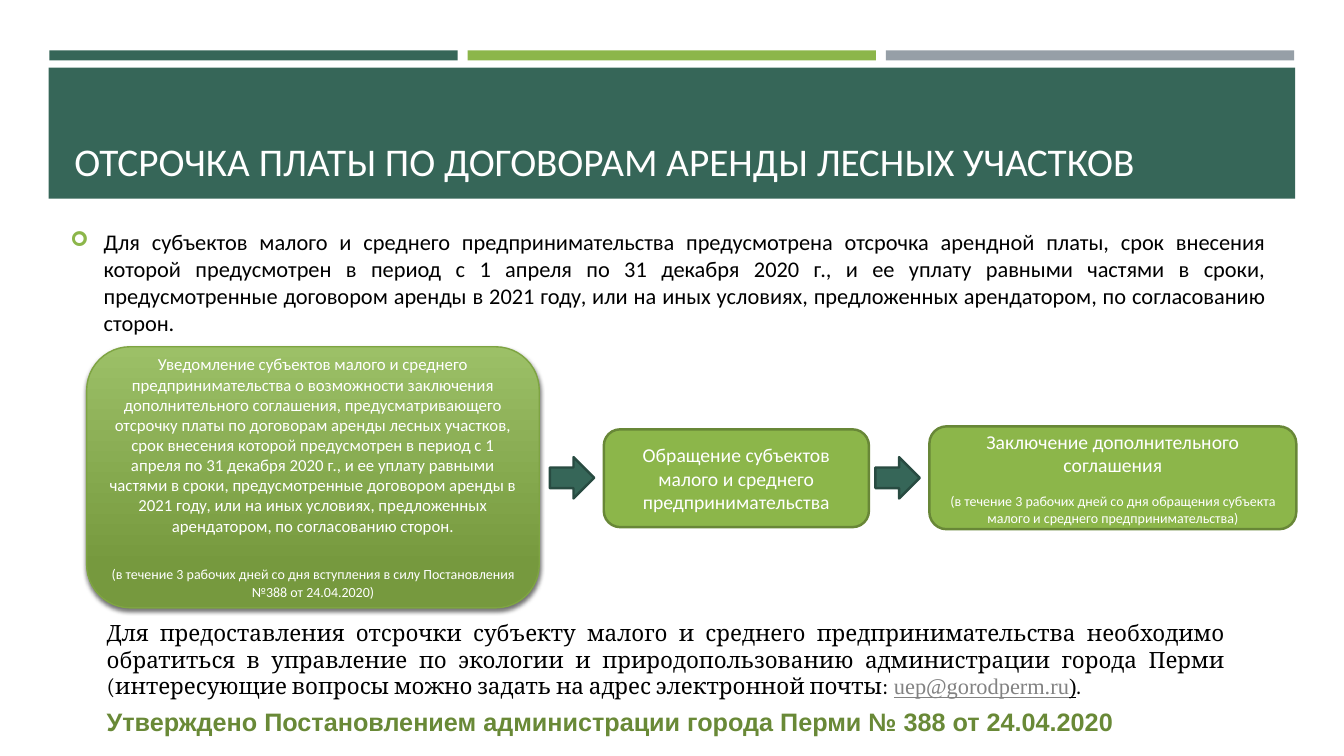
from lxml.etree import SubElement
from pptx import Presentation
from pptx.dml.color import RGBColor
from pptx.enum.shapes import MSO_SHAPE
from pptx.enum.text import MSO_ANCHOR, PP_ALIGN
from pptx.oxml.ns import qn
from pptx.util import Inches, Pt

PINE = RGBColor(0x36, 0x66, 0x58)
DEEP = RGBColor(0x28, 0x4B, 0x41)
LIME = RGBColor(0x8C, 0xB6, 0x4A)
MOSS = RGBColor(0x68, 0x87, 0x37)
LEAF = RGBColor(0x69, 0x89, 0x37)
PALE = RGBColor(0x9C, 0xC0, 0x67)
OLIVE = RGBColor(0x76, 0x99, 0x3E)
EDGE = RGBColor(0x7E, 0xA4, 0x42)
STEEL = RGBColor(0x96, 0x9F, 0xA7)
GREY = RGBColor(0x82, 0x82, 0x82)
WHITE = RGBColor(0xFF, 0xFF, 0xFF)
BLACK = RGBColor(0, 0, 0)

COLS, ROWS = 40, 30


class Board:
    font = "Calibri"

    def __init__(self, deck):
        self.slide = deck.slides.add_slide(deck.slide_layouts[6])
        self.col = deck.slide_width / COLS
        self.row = deck.slide_height / ROWS

    def place(self, left, top, width, height):
        return (round(left * self.col), round(top * self.row),
                round(width * self.col), round(height * self.row))

    def shape(self, kind, area, fill, line=None, weight=1.75):
        item = self.slide.shapes.add_shape(kind, *self.place(*area))
        item.shadow.inherit = False
        item.fill.solid()
        item.fill.fore_color.rgb = fill
        if line is None:
            item.line.fill.background()
        else:
            item.line.color.rgb = line
            item.line.width = Pt(weight)
        return item

    def style(self, run, size, color, font=None, bold=False, under=False):
        run.font.name = font or self.font
        run.font.size = Pt(size)
        run.font.color.rgb = color
        run.font.bold = bold
        run.font.underline = under

    def bar(self, area, fill):
        return self.shape(MSO_SHAPE.RECTANGLE, area, fill)

    def arrow(self, area):
        item = self.shape(MSO_SHAPE.DOWN_ARROW, area, PINE, DEEP)
        item.rotation = 270

    def step(self, area, parts, line=MOSS, weight=1.75):
        item = self.shape(MSO_SHAPE.ROUNDED_RECTANGLE, area, LIME, line, weight)
        frame = item.text_frame
        frame.word_wrap = True
        frame.vertical_anchor = MSO_ANCHOR.MIDDLE
        frame.text = "\n".join(text for text, size, gap in parts)
        for para, (text, size, gap) in zip(frame.paragraphs, parts):
            para.alignment = PP_ALIGN.CENTER
            para.space_before = Pt(gap)
            self.style(para.runs[0], size, WHITE)
        return item

    def glow(self, item, top, end):
        item.fill.gradient()
        item.fill.gradient_angle = 270
        for stop, color, spot in zip(item.fill.gradient_stops, (top, end), (0, 0.84)):
            stop.color.rgb = color
            stop.position = spot
        effects = item._element.spPr.find(qn("a:effectLst"))
        shade = SubElement(effects, qn("a:outerShdw"), blurRad=str(Pt(3)),
                           dist=str(Pt(2)), dir="5400000", rotWithShape="0")
        tone = SubElement(shade, qn("a:srgbClr"), val="000000")
        SubElement(tone, qn("a:alpha"), val="55000")

    def text(self, area, runs, align=PP_ALIGN.LEFT, anchor=MSO_ANCHOR.TOP):
        frame = self.slide.shapes.add_textbox(*self.place(*area)).text_frame
        frame.word_wrap = True
        frame.vertical_anchor = anchor
        para = frame.paragraphs[0]
        para.alignment = align
        for words, look in runs:
            run = para.add_run()
            run.text = words
            self.style(run, **look)
        return para

    def bullet(self, para, mark, color):
        para.space_before = Pt(3)
        para.space_after = Pt(6)
        props = para._p.get_or_add_pPr()
        props.set("marL", str(Inches(0.33)))
        props.set("indent", str(Inches(-0.33)))
        tint = SubElement(props, qn("a:buClr"))
        SubElement(tint, qn("a:srgbClr"), val=str(color))
        SubElement(props, qn("a:buSzPct"), val="92000")
        SubElement(props, qn("a:buFont"), typeface="Wingdings")
        SubElement(props, qn("a:buChar"), char=mark)


def main():
    deck = Presentation()
    deck.slide_width, deck.slide_height = Inches(13.33), Inches(7.5)
    board = Board(deck)

    for i, color in enumerate((PINE, LIME, STEEL)):
        board.bar((1.47 + 12.45 * i, 2, 12.15, 0.4), color)
    board.bar((1.45, 2.68, 37.1, 5.2), PINE)
    board.text((1.92, 3.08, 36.18, 4.44),
               [("ОТСРОЧКА ПЛАТЫ ПО ДОГОВОРАМ АРЕНДЫ ЛЕСНЫХ УЧАСТКОВ",
                 dict(size=28, color=WHITE))], anchor=MSO_ANCHOR.BOTTOM)

    lead = board.text(
        (1.8, 8.56, 36.18, 5.24),
        [("Для субъектов малого и среднего предпринимательства предусмотрена "
          "отсрочка арендной платы, срок внесения которой предусмотрен в период "
          "с 1 апреля по 31 декабря 2020 г., и ее уплату равными частями в сроки, "
          "предусмотренные договором аренды в 2021 году, или на иных условиях, "
          "предложенных арендатором, по согласованию сторон.",
          dict(size=16, color=BLACK))], PP_ALIGN.JUSTIFY, MSO_ANCHOR.MIDDLE)
    board.bullet(lead, "➢", LIME)

    notice = board.step((2.58, 13.76, 13.47, 10.36), [
        ("Уведомление субъектов малого и среднего предпринимательства о "
         "возможности заключения дополнительного соглашения, предусматривающего "
         "отсрочку платы по договорам аренды лесных участков, срок внесения "
         "которой предусмотрен в период с 1 апреля по 31 декабря 2020 г., и ее "
         "уплату равными частями в сроки, предусмотренные договором аренды в "
         "2021 году, или на иных условиях, предложенных арендатором, по "
         "согласованию сторон.", 12, 0),
        ("(в течение 3 рабочих дней со дня вступления в силу Постановления "
         "№388 от 24.04.2020)", 10, 20)], EDGE, 1)
    notice.text_frame.paragraphs[1].line_spacing = 1.1
    board.glow(notice, PALE, OLIVE)
    board.step((17.97, 17.04, 7.89, 3.88), [
        ("Обращение субъектов малого и среднего предпринимательства", 14, 0)])
    board.step((27.66, 16.92, 10.92, 4.08), [
        ("Заключение дополнительного соглашения", 14, 0),
        ("(в течение 3 рабочих дней со дня обращения субъекта малого и "
         "среднего предпринимательства)", 10, 11)])
    for left in (16.41, 26.1):
        board.arrow((left, 18.08, 1.23, 1.76))

    serif = dict(size=16, color=BLACK, font="Cambria")
    roman = dict(size=16, font="Times New Roman", under=True)
    board.text((2.88, 24.36, 33.9, 3.64), [
        ("Для предоставления отсрочки субъекту малого и среднего "
         "предпринимательства необходимо обратиться в управление по экологии и "
         "природопользованию администрации города Перми (интересующие вопросы "
         "можно задать на адрес электронной почты: ", serif),
        ("uep@gorodperm.ru", dict(roman, color=GREY)),
        (")", dict(roman, color=BLACK)),
        (".", serif)], PP_ALIGN.JUSTIFY)
    board.text((2.88, 27.84, 36.54, 1.6), [
        ("Утверждено Постановлением администрации города Перми № 388 от 24.04.2020",
         dict(size=18, color=LEAF, font="Arial", bold=True))])

    deck.save("out.pptx")


if __name__ == "__main__":
    main()
